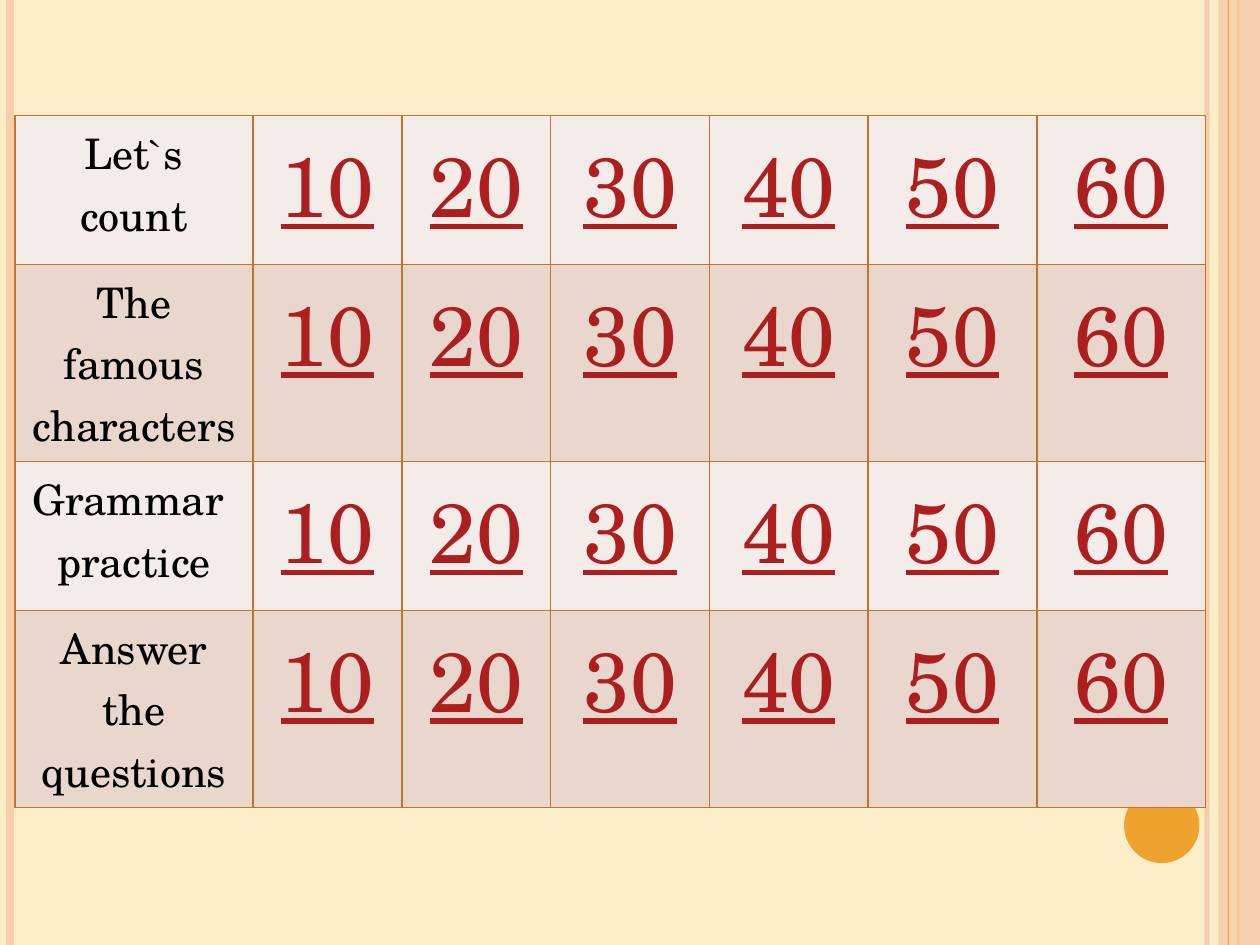
from lxml.etree import SubElement
from pptx import Presentation
from pptx.dml.color import RGBColor
from pptx.enum.shapes import MSO_CONNECTOR, MSO_SHAPE
from pptx.enum.text import PP_ALIGN
from pptx.oxml.ns import qn
from pptx.util import Cm, Pt

# Content
CATEGORIES = ["Let`s count", "The famous characters",
              "Grammar  practice", "Answer the questions"]
POINTS = ["10", "20", "30", "40", "50", "60"]

# Look
FONT = "TeX Gyre Schola"
COLORS = {
    "background": "FBEEC9", "peach": "F6CEAD", "orange": "F0A22E",
    "border": "C17529", "light": "F4ECE8", "dark": "E9D6CD",
    "category": "000000", "points": "AD1F1F",
}
WIDTH, HEIGHT = 25.4, 19.05
COLUMN_WIDTHS = [4.8, 3, 3, 3.2, 3.2, 3.4, 3.4]
ROW_HEIGHT = 3
# x, colour, width in points, opacity in percent
BACK_STRIPES = [(24.33, "peach", 3, 93), (0.21, "peach", 4.5, 100),
                (24.97, "orange", 1.5, 100)]
FRONT_STRIPES = [(24.77, "orange", 0.75, 100)]


def rgb(name):
    return RGBColor.from_string(COLORS[name])


def set_opacity(parent, percent):
    color = next(parent.iter(qn("a:srgbClr")))
    SubElement(color, qn("a:alpha"), val=str(percent * 1000))


def add_stripes(slide, stripes):
    for x, color, width, opacity in stripes:
        stripe = slide.shapes.add_connector(
            MSO_CONNECTOR.STRAIGHT, Cm(x), Cm(0), Cm(x), Cm(HEIGHT))
        stripe.line.color.rgb = rgb(color)
        stripe.line.width = Pt(width)
        properties = stripe._element.spPr
        if opacity < 100:
            set_opacity(properties, opacity)
        SubElement(properties, qn("a:effectLst"))


def add_solid(slide, preset, left, top, width, height, color):
    solid = slide.shapes.add_shape(
        preset, Cm(left), Cm(top), Cm(width), Cm(height))
    solid.shadow.inherit = False
    solid.fill.solid()
    solid.fill.fore_color.rgb = rgb(color)
    solid.line.fill.background()
    return solid


def add_borders(cell):
    properties = cell._tc.get_or_add_tcPr()
    for side in ("lnL", "lnR", "lnT", "lnB"):
        border = SubElement(properties, qn(f"a:{side}"), w=str(Pt(1)))
        fill = SubElement(border, qn("a:solidFill"))
        SubElement(fill, qn("a:srgbClr"), val=COLORS["border"])


def fill_cell(cell, text, size, color, background, underline):
    add_borders(cell)
    cell.fill.solid()
    cell.fill.fore_color.rgb = rgb(background)
    cell.text = text
    paragraph = cell.text_frame.paragraphs[0]
    paragraph.alignment = PP_ALIGN.CENTER
    # Runs carry the format so that table style defaults do not win
    font = paragraph.runs[0].font
    font.name = FONT
    font.size = Pt(size)
    font.bold = False
    font.underline = underline
    font.color.rgb = rgb(color)


def add_score_table(slide):
    table = slide.shapes.add_table(
        len(CATEGORIES), len(COLUMN_WIDTHS), Cm(0.3), Cm(2.33),
        Cm(sum(COLUMN_WIDTHS)), Cm(ROW_HEIGHT * len(CATEGORIES))).table
    for column, width in zip(table.columns, COLUMN_WIDTHS):
        column.width = Cm(width)
    for index, category in enumerate(CATEGORIES):
        table.rows[index].height = Cm(ROW_HEIGHT)
        background = ("light", "dark")[index % 2]
        fill_cell(table.cell(index, 0), category, 24, "category",
                  background, False)
        for column, points in enumerate(POINTS, start=1):
            fill_cell(table.cell(index, column), points, 48, "points",
                      background, True)


def main():
    deck = Presentation()
    deck.slide_width, deck.slide_height = Cm(WIDTH), Cm(HEIGHT)
    slide = deck.slides.add_slide(deck.slide_layouts[6])
    slide.background.fill.solid()
    slide.background.fill.fore_color.rgb = rgb("background")

    # Side decoration
    add_stripes(slide, BACK_STRIPES)
    band = add_solid(slide, MSO_SHAPE.RECTANGLE, 24.56, 0,
                     WIDTH - 24.56, HEIGHT, "peach")
    set_opacity(band._element.spPr, 87)
    add_stripes(slide, FRONT_STRIPES)
    add_solid(slide, MSO_SHAPE.OVAL, 22.66, 15.88, 1.52, 1.52, "orange")

    # Score board
    add_score_table(slide)
    deck.save("out.pptx")


if __name__ == "__main__":
    main()
